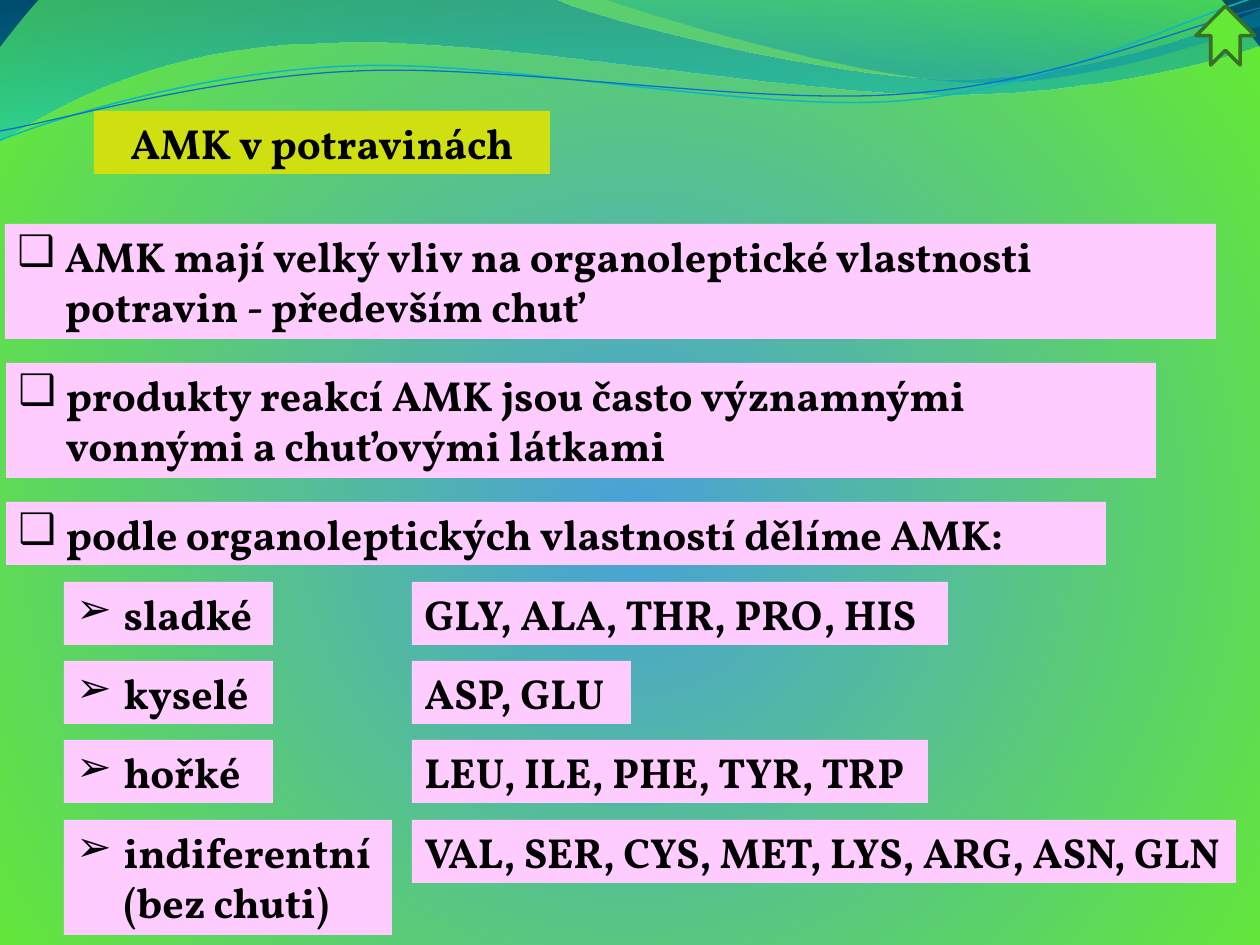
"""Build the slide on amino acids in food and their taste."""
from pptx import Presentation
from pptx.dml.color import RGBColor as Rgb
from pptx.enum.shapes import MSO_SHAPE as Kind
from pptx.enum.text import MSO_AUTO_SIZE as Auto, PP_ALIGN as Align
from pptx.oxml import parse_xml
from pptx.oxml.ns import nsdecls, qn
from pptx.util import Pt

PX = 914400 / 126


class Theme:
    font, size = "Vollkorn", Pt(24)
    ink = Rgb.from_string("000000")
    title, pink = "D0DF0F", "FFCCFF"
    arrow, edge = "64E935", "387026"
    cyan, blue = "0AB8BF", "0F6FC6"
    back = [(0, "4AA0DA", 100), (100, "64E935", 100), (100, "002B45", 100)]
    deep = [(0, "0074A1", 45), (100, "00C6CF", 55)]
    teal = [(0, "00A1A9", 30), (80, "008BBF", 45)]


def px(*nums):
    return [round(n * PX) for n in nums]


def blend(fill, root, stops, shade):
    fill.gradient()
    old = next(root.iter(qn("a:gradFill")))
    marks = "".join(
        f'<a:gs pos="{pos * 1000}"><a:srgbClr val="{hue}">'
        f'<a:alpha val="{alpha * 1000}"/></a:srgbClr></a:gs>'
        for pos, hue, alpha in stops)
    new = f'<a:gradFill {nsdecls("a")} rotWithShape="1"><a:gsLst>{marks}</a:gsLst>{shade}</a:gradFill>'
    old.getparent().replace(old, parse_xml(new))


deck = Presentation()
deck.slide_width, deck.slide_height = px(1260, 945)
slide = deck.slides.add_slide(deck.slide_layouts[6])
shapes = slide.shapes
blend(slide.background.fill, slide._element, Theme.back,
      '<a:path path="circle"><a:fillToRect l="10000" t="110000" r="10000" b="100000"/></a:path>')

waves = [
    (Theme.deep, 0, (0, 0), [
        (554, -1), (600, 21, 837, 79, 955, 79), (1075, 79, 1207, 33, 1260, 11),
        (1261, 45), (1239, 55, 1096, 96, 940, 94), (784, 94, 481, 35, 324, 43),
        (163, 45, 58, 105, -1, 142), (0, 0)]),
    (Theme.teal, 0, (604, -1), [
        (642, 14, 859, 78, 969, 82), (1077, 87, 1211, 40, 1260, 26), (1260, 0), (604, -1)]),
    (Theme.cyan, 0.85, (0, 140), [
        (60, 117, 199, 72, 349, 66), (498, 59, 747, 112, 898, 101),
        (1050, 89, 1182, 19, 1257, -3)]),
    (Theme.blue, 0.75, (0, 131), [
        (59, 121, 207, 77, 357, 71), (508, 64, 752, 106, 903, 94),
        (1053, 84, 1186, 26, 1260, 8)]),
]
for paint, width, start, parts in waves:
    pen = shapes.build_freeform(*start, scale=PX)
    dots = [part[i:i + 2] for part in parts for i in range(0, len(part), 2)]
    pen.add_line_segments(dots, close=not width)
    wave = pen.convert_to_shape()
    legs = iter(list(wave._element.iter(qn("a:lnTo"))))
    for part in parts:
        leg = next(legs)
        if len(part) == 6:
            curve = parse_xml(f'<a:cubicBezTo {nsdecls("a")}/>')
            leg.addprevious(curve)
            for bend in (leg, next(legs), next(legs)):
                curve.append(bend[0])
                bend.getparent().remove(bend)
    wave.shadow.inherit = False
    if width:
        wave.fill.background()
        wave.line.color.rgb = Rgb.from_string(paint)
        wave.line.width = Pt(width)
    else:
        blend(wave.fill, wave._element, paint, '<a:lin ang="5400000" scaled="1"/>')
        wave.line.fill.background()

boxes = [
    (94, 111, 456, 63, "", "AMK v potravinách"),
    (5, 224, 1211, 115, "❑", "AMK mají velký vliv na organoleptické vlastnosti potravin - především chuť"),
    (6, 363, 1150, 115, "❑", "produkty reakcí AMK jsou často významnými vonnými a chuťovými látkami"),
    (6, 502, 1100, 63, "❑", "podle organoleptických vlastností dělíme AMK:"),
]
tastes = [
    ("sladké", 209, 63, "GLY, ALA, THR, PRO, HIS", 536),
    ("kyselé", 209, 63, "ASP, GLU", 219),
    ("hořké", 209, 63, "LEU, ILE, PHE, TYR, TRP", 516),
    ("indiferentní (bez chuti)", 328, 115, "VAL, SER, CYS, MET, LYS, ARG, ASN, GLN", 824),
]
for row, (taste, wide, high, acids, span) in enumerate(tastes):
    top = 582 + 238 * row // 3
    boxes += [(64, top, wide, high, "➢", taste), (412, top, span, 63, "", acids)]

for row, (left, top, wide, high, mark, text) in enumerate(boxes):
    box = shapes.add_textbox(*px(left, top, wide, high))
    box.fill.solid()
    box.fill.fore_color.rgb = Rgb.from_string(Theme.pink if row else Theme.title)
    frame = box.text_frame
    frame.word_wrap = True
    frame.auto_size = Auto.SHAPE_TO_FIT_TEXT
    para = frame.paragraphs[0]
    para.alignment = Align.LEFT if row else Align.CENTER
    if mark:
        props = para._p.get_or_add_pPr()
        props.set("marL", "342900")
        props.set("indent", "-342900")
        props.append(parse_xml(f'<a:buFont {nsdecls("a")} typeface="{Theme.font}"/>'))
        props.append(parse_xml(f'<a:buChar {nsdecls("a")} char="{mark}"/>'))
    run = para.add_run()
    run.text = text
    font = run.font
    font.name, font.size, font.bold = Theme.font, Theme.size, True
    font.color.rgb = Theme.ink

arrow = shapes.add_shape(Kind.NOTCHED_RIGHT_ARROW, *px(1196, 6, 59, 59))
arrow.rotation = 270
arrow.shadow.inherit = False
arrow.fill.solid()
arrow.fill.fore_color.rgb = Rgb.from_string(Theme.arrow)
arrow.line.color.rgb = Rgb.from_string(Theme.edge)
arrow.line.width = Pt(2)

deck.save("out.pptx")
